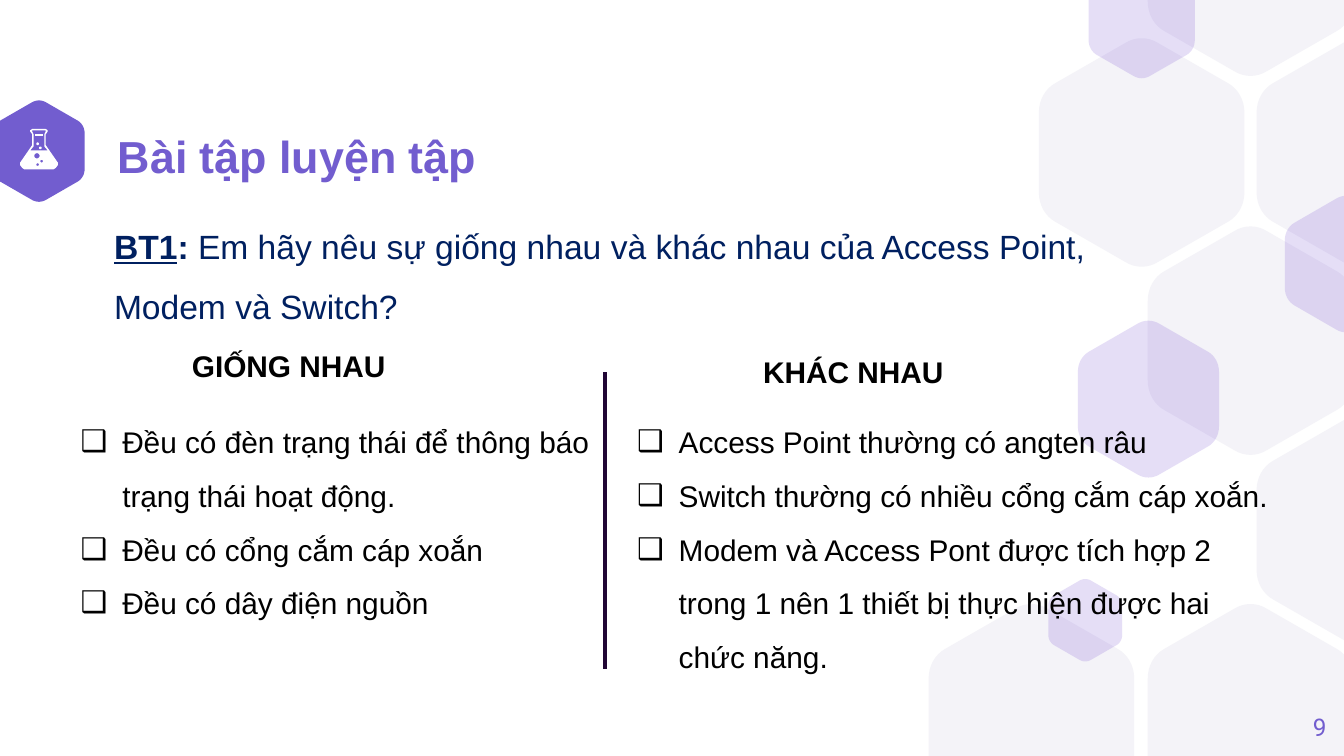
import math

import pptx
import pptx.dml.color
import pptx.enum.shapes
import pptx.enum.text
import pptx.oxml
import pptx.oxml.ns
import pptx.util
from lxml import etree

Inches = pptx.util.Inches
ALIGN = pptx.enum.text.PP_ALIGN
ANCHOR = pptx.enum.text.MSO_ANCHOR

COLORS = {
    "accent": "725DCF", "pale": "F4F3F8", "violet": "5322C9", "navy": "002060",
    "black": "000000", "white": "FFFFFF", "divider": "210635",
}
WIDTH = 10
HEIGHT = WIDTH * 9 / 16

TITLE = "Bài tập luyện tập"
QUESTION = [
    [("BT1", {"bold": True, "underline": True}), (": ", {"bold": True}),
     ("Em hãy nêu sự giống nhau và khác nhau của Access Point,", {})],
    "Modem và Switch?",
]
HEADINGS = [
    ("GIỐNG NHAU", (1.33, 2.54, 1.66, 0.37)),
    ("KHÁC NHAU", (5.58, 2.58, 1.56, 0.37)),
]
SIMILAR = [
    "Đều có đèn trạng thái để thông báo",
    "trạng thái hoạt động.",
    "Đều có cổng cắm cáp xoắn",
    "Đều có dây điện nguồn",
]
DIFFERENT = [
    "Access Point thường có angten râu",
    "Switch thường có nhiều cổng cắm cáp xoắn.",
    "Modem và Access Pont được tích hợp 2 trong 1 nên 1 thiết bị thực hiện được hai chức năng.",
]
LISTS = [
    (1, SIMILAR, (0.5, 2.97, 4.04, 1.72), False, {1}),
    (2, DIFFERENT, (4.64, 2.97, 5, 2.12), True, set()),
]

PALE_SIZE = (1.53, 1.69)
HEXAGONS = [
    (-0.05, 0.75, 0.68, 0.75, "accent", 100),
    (6.91, 4.5, *PALE_SIZE, "pale", 100),
    (8.54, 4.5, *PALE_SIZE, "pale", 100),
    (9.35, 0.29, *PALE_SIZE, "pale", 100),
    (8.54, -1.13, *PALE_SIZE, "pale", 100),
    (8.54, 1.69, *PALE_SIZE, "pale", 100),
    (7.73, 0.29, *PALE_SIZE, "pale", 100),
    (9.56, 1.46, 0.91, 1.01, "violet", 15),
    (7.8, 4.31, 0.55, 0.61, "violet", 15),
    (8.1, -0.29, 0.79, 0.87, "violet", 15),
    (8.02, 2.39, 1.05, 1.16, "violet", 15),
    (9.35, 3.1, *PALE_SIZE, "pale", 100),
]
SIDE_CORNER = [(0.5, -0.175), (0.5, -0.23), (0.47, -0.28), (0.42, -0.305)]
TOP_CORNER = [(0.08, -0.482), (0.03, -0.51), (-0.03, -0.51), (-0.08, -0.482)]

FLASK_AXIS = 0.29
FLASK_OUTER = [(0.05, 0.96), (0.065, 0.97), (0.065, 0.98), (0.05, 1), (0.05, 1.08),
               (0.14, 1.21), (0.14, 1.23), (0.125, 1.25), (0.11, 1.26)]
FLASK_INNER = [(0.05, 0.97), (0.05, 0.98), (0.04, 1), (0.04, 1.09), (0.065, 1.12)]
FLASK_HOLES = [(0.275, 1.16, 0.02), (0.31, 1.2, 0.01), (0.28, 1.225, 0.01)]
BUBBLES = [(0.3, 1.1, 0.01), (0.28, 1.07, 0.01)]
FLASK_BAR = [(0.26, 1), (0.32, 1), (0.32, 1.01), (0.26, 1.01)]


def rgb(name):
    return pptx.dml.color.RGBColor.from_string(COLORS[name])


def place(box, left, top, width, height):
    box.left, box.top = Inches(left), Inches(top)
    box.width, box.height = Inches(width), Inches(height)


def bezier(points, steps=8):
    for step in range(steps + 1):
        t = step / steps
        weights = [math.comb(3, i) * t**i * (1 - t) ** (3 - i) for i in range(4)]
        yield tuple(sum(w * p[axis] for w, p in zip(weights, points)) for axis in (0, 1))


def hexagon(left, top, width, height):
    right = list(bezier(SIDE_CORNER))
    crown = right + list(bezier(TOP_CORNER)) + [(-x, y) for x, y in reversed(right)]
    ring = crown + [(-x, -y) for x, y in crown]
    return [(left + width * (0.5 + x), min(max(top + height * (0.5 + y), 0), HEIGHT))
            for x, y in ring]


def circle(x, y, radius, steps=16):
    angles = [2 * math.pi * step / steps for step in range(steps)]
    return [(x + radius * math.cos(a), y + radius * math.sin(a)) for a in angles]


def mirrored(half):
    return [(FLASK_AXIS + x, y) for x, y in half] + [(FLASK_AXIS - x, y) for x, y in reversed(half)]


def draw(page, contours, color, opacity=100):
    outlines = [[(Inches(x), Inches(y)) for x, y in contour] for contour in contours]
    builder = page.shapes.build_freeform(*outlines[0][0])
    builder.add_line_segments(outlines[0][1:])
    for outline in outlines[1:]:
        builder.move_to(*outline[0])
        builder.add_line_segments(outline[1:])
    shape = builder.convert_to_shape()
    shape.shadow.inherit = False
    shape.fill.solid()
    shape.fill.fore_color.rgb = rgb(color)
    shape.line.fill.background()
    if opacity < 100:
        tint = shape.element.spPr.find(".//" + pptx.oxml.ns.qn("a:srgbClr"))
        etree.SubElement(tint, pptx.oxml.ns.qn("a:alpha"), val=str(opacity * 1000))


def write(box, paragraphs, size, color="black", font="Arial", bold=False, align=ALIGN.LEFT,
          anchor=ANCHOR.TOP, spacing=1.0, wrap=False, inset=None, bullet=None, continued=()):
    frame = box.text_frame
    frame.word_wrap = wrap
    frame.auto_size = pptx.enum.text.MSO_AUTO_SIZE.NONE
    frame.vertical_anchor = anchor
    if inset is not None:
        frame.margin_left = frame.margin_right = Inches(inset)
        frame.margin_top = frame.margin_bottom = Inches(inset)
    for index, content in enumerate(paragraphs):
        para = frame.add_paragraph() if index else frame.paragraphs[0]
        para.alignment, para.line_spacing = align, spacing
        para.space_before = para.space_after = pptx.util.Pt(0)
        for text, extra in [(content, {})] if isinstance(content, str) else content:
            span = para.add_run()
            span.text = text
            span.font.name, span.font.size = font, pptx.util.Pt(size)
            span.font.color.rgb = rgb(color)
            span.font.bold = extra.get("bold", bold)
            span.font.underline = extra.get("underline", False)
        if bullet:
            add_bullet(para, None if index in continued else bullet, color)


def add_bullet(para, bullet, color):
    props = para._p.get_or_add_pPr()
    hang = Inches(0.31)
    props.set("marL", str(hang))
    props.set("indent", str(-hang if bullet else 0))
    if bullet:
        tint = etree.SubElement(props, pptx.oxml.ns.qn("a:buClr"))
        etree.SubElement(tint, pptx.oxml.ns.qn("a:srgbClr"), val=COLORS[color])
        etree.SubElement(props, pptx.oxml.ns.qn("a:buChar"), char=bullet)
    else:
        etree.SubElement(props, pptx.oxml.ns.qn("a:buNone"))


def add_box(page, bounds):
    return page.shapes.add_textbox(*[Inches(value) for value in bounds])


def main():
    deck = pptx.Presentation()
    deck.slide_width, deck.slide_height = Inches(WIDTH), Inches(HEIGHT)
    page = deck.slides.add_slide(deck.slide_layouts[3])

    for *bounds, color, opacity in HEXAGONS:
        draw(page, [hexagon(*bounds)], color, opacity)
    holes = [circle(*hole) for hole in FLASK_HOLES]
    draw(page, [mirrored(FLASK_OUTER), mirrored(FLASK_INNER), *holes], "white")
    for contour in [circle(*bubble) for bubble in BUBBLES] + [FLASK_BAR]:
        draw(page, [contour], "white")

    title = page.shapes.title
    place(title, 0.75, 0.81, 2.92, 0.75)
    write(title, [TITLE], 24, "accent", bold=True, align=ALIGN.CENTER,
          anchor=ANCHOR.MIDDLE, spacing=0.9, wrap=True, inset=0)
    write(add_box(page, (9.27, 5.19, 0.6, 0.43)), ["9"], 13, "accent", font="Roboto",
          align=ALIGN.RIGHT, anchor=ANCHOR.MIDDLE, wrap=True, inset=0)
    write(add_box(page, (0.75, 1.48, 7.51, 1.01)), QUESTION, 18, "navy", spacing=1.5)
    for text, bounds in HEADINGS:
        write(add_box(page, bounds), [text], 16, bold=True)

    divider = page.shapes.add_connector(pptx.enum.shapes.MSO_CONNECTOR.STRAIGHT,
                                        Inches(4.5), Inches(2.77), Inches(4.5), Inches(4.98))
    divider.line.color.rgb = rgb("divider")
    divider.line.width = pptx.util.Pt(2.25)
    etree.SubElement(divider.element.spPr, pptx.oxml.ns.qn("a:effectLst"))

    for index, items, bounds, wrap, continued in LISTS:
        body = page.placeholders[index]
        place(body, *bounds)
        write(body, items, 16, spacing=1.5, wrap=wrap, bullet="❑", continued=continued)
    for box in list(page.placeholders):
        box.element.getparent().append(box.element)

    deck.save("out.pptx")


if __name__ == "__main__":
    main()
